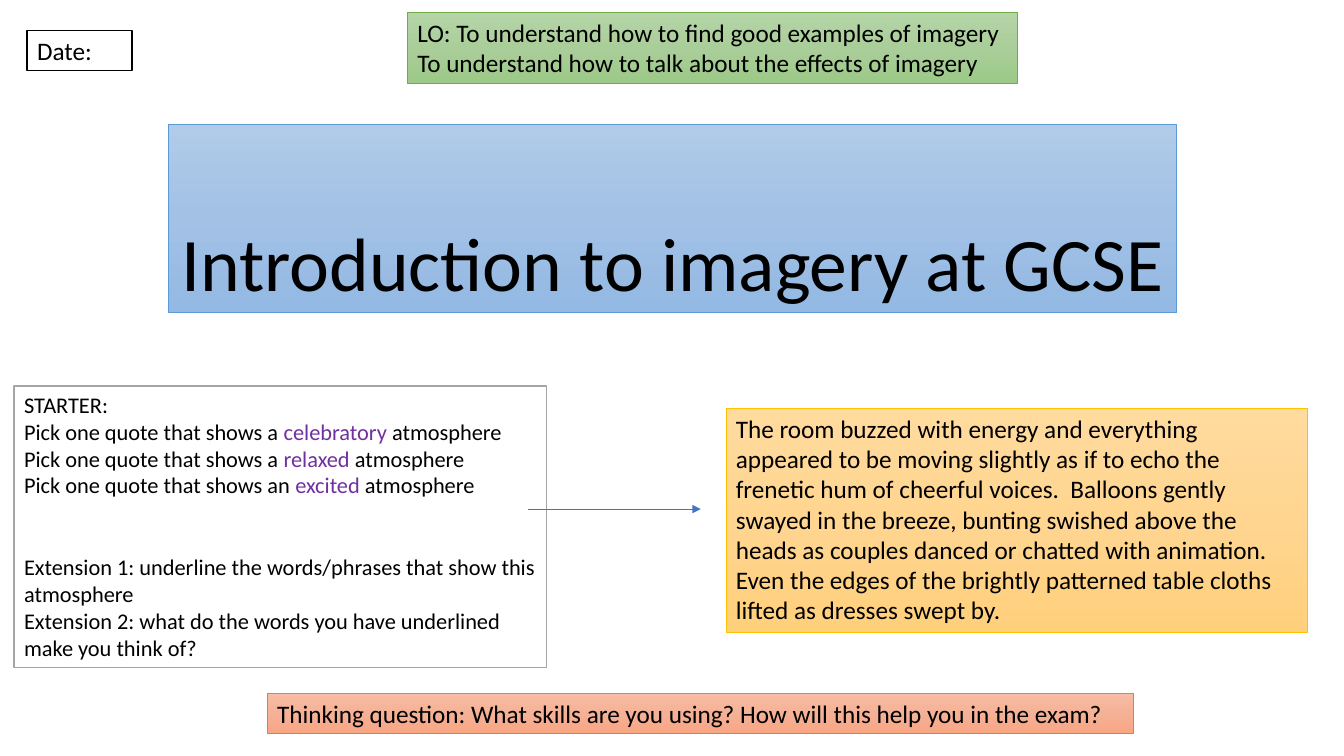
from copy import deepcopy

from lxml import etree
from pptx import Presentation
from pptx.dml.color import RGBColor
from pptx.enum.shapes import MSO_CONNECTOR as CONNECTOR
from pptx.enum.text import MSO_ANCHOR as ANCHOR, MSO_AUTO_SIZE as AUTO_SIZE, PP_ALIGN as ALIGN
from pptx.oxml.ns import qn
from pptx.util import Inches, Pt

BLACK, PURPLE, WHITE = "000000", "7030A0", "FFFFFF"


def color(hex_string):
    return RGBColor.from_string(hex_string)


def write_box(shape, paragraphs, at, fills, line, line_width=0.5, size=18, wrap=True,
              anchor=ANCHOR.TOP, align=ALIGN.LEFT, spacing=None, auto_size=AUTO_SIZE.SHAPE_TO_FIT_TEXT):
    """Place and paint a box; every second run of a paragraph is highlighted."""
    shape.left, shape.top, shape.width, shape.height = map(Inches, at)
    shape.line.color.rgb = color(line)
    shape.line.width = Pt(line_width)
    if len(fills) == 1:
        shape.fill.solid()
        shape.fill.fore_color.rgb = color(fills[0])
    else:
        shape.fill.gradient()
        shape.fill.gradient_angle = 270
        first_stop = shape.element.spPr.find(".//" + qn("a:gs"))
        middle_stop = deepcopy(first_stop)
        first_stop.addnext(middle_stop)
        for number, (stop, fill) in enumerate(zip(shape.fill.gradient_stops, fills)):
            stop.position = number / 2
            stop.color.rgb = color(fill)

    frame = shape.text_frame
    frame.word_wrap = wrap
    frame.auto_size = auto_size
    frame.vertical_anchor = anchor
    for number, runs in enumerate(paragraphs):
        paragraph = frame.add_paragraph() if number else frame.paragraphs[0]
        paragraph.alignment = align
        paragraph.line_spacing = spacing
        for position, text in enumerate(runs):
            run = paragraph.add_run()
            run.text = text
            run.font.name = "Calibri"
            run.font.size = Pt(size)
            run.font.color.rgb = color(PURPLE if position % 2 else BLACK)


presentation = Presentation()
presentation.slide_width = Inches(13.33)
presentation.slide_height = Inches(7.5)
slide = presentation.slides.add_slide(presentation.slide_layouts[5])

# Title
write_box(slide.shapes.title, [["Introduction to imagery at GCSE"]], (1.67, 1.23, 10, 1.87),
          ["B1CBE9", "A3C1E5", "93B9E4"], "5B9BD5", size=54, anchor=ANCHOR.BOTTOM,
          align=ALIGN.CENTER, spacing=0.9, auto_size=AUTO_SIZE.NONE)

# Learning objective
write_box(slide.shapes.add_textbox(0, 0, 0, 0),
          [["LO: To understand how to find good examples of imagery"],
           ["To understand how to talk about the effects of imagery"]],
          (4.04, 0.12, 6.05, 0.71), ["B5D5A7", "AACE9A", "9CC987"], "70AD47", wrap=False)

# Date
write_box(slide.shapes.add_textbox(0, 0, 0, 0), [["Date:"]], (0.27, 0.3, 1.04, 0.4),
          [WHITE], BLACK, line_width=1, wrap=False)

# Story extract
story = ("The room buzzed with energy and everything appeared to be moving slightly as if to echo "
         "the frenetic hum of cheerful voices.  Balloons gently swayed in the breeze, bunting "
         "swished above the heads as couples danced or chatted with animation.  Even the edges of "
         "the brightly patterned table cloths lifted as dresses swept by.")
write_box(slide.shapes.add_textbox(0, 0, 0, 0), [[story]], (7.2, 4.05, 5.77, 2.22),
          ["FFDB9E", "FFD590", "FFD07C"], "FFC000")

# Starter task, with a gap before the extensions
moods = [("a", "celebratory"), ("a", "relaxed"), ("an", "excited")]
quotes = [[f"Pick one quote that shows {article} ", mood, " atmosphere"] for article, mood in moods]
extensions = [["Extension 1: underline the words/phrases that show this atmosphere"],
              ["Extension 2: what do the words you have underlined make you think of?"]]
starter = slide.shapes.add_textbox(0, 0, 0, 0)
write_box(starter, [["STARTER:"], *quotes, *extensions], (0.14, 3.83, 5.28, 2.79),
          [WHITE], "A5A5A5", line_width=1, size=16)
starter.text_frame.paragraphs[-2].space_before = Pt(39)

# Thinking question
write_box(slide.shapes.add_textbox(0, 0, 0, 0),
          [["Thinking question: What skills are you using? How will this help you in the exam?"]],
          (2.65, 6.88, 8.59, 0.4), ["F7BDA5", "F5B196", "F8A582"], "ED7D31", wrap=False)

# Arrow from the starter to the story
arrow = slide.shapes.add_connector(CONNECTOR.STRAIGHT, *map(Inches, (5.24, 5.05, 6.95, 5.05)))
arrow.line.color.rgb = color("4472C4")
arrow.line.width = Pt(0.5)
etree.SubElement(arrow.line._get_or_add_ln(), qn("a:tailEnd"), type="triangle")
etree.SubElement(arrow.element.spPr, qn("a:effectLst"))

presentation.save("out.pptx")
